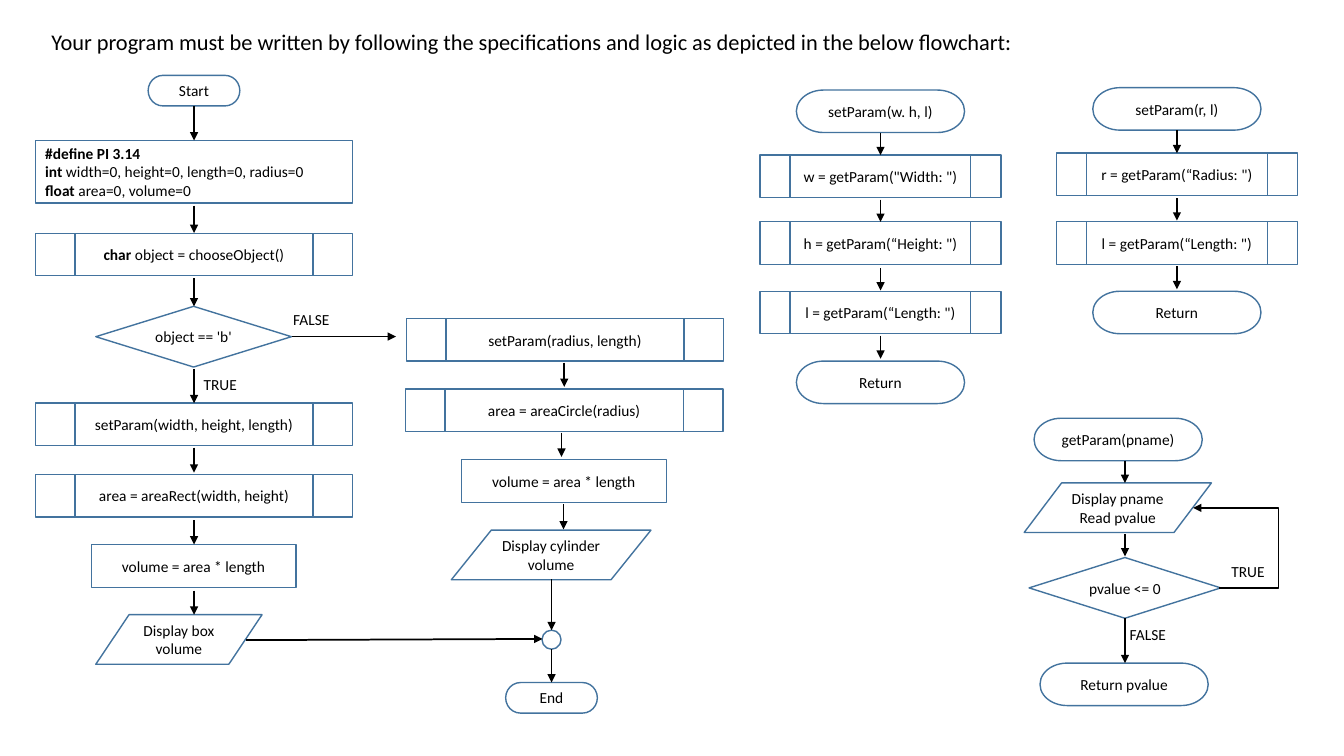
from lxml.etree import SubElement
from pptx import Presentation
from pptx.dml.color import RGBColor
from pptx.enum.shapes import MSO_CONNECTOR, MSO_SHAPE
from pptx.enum.text import MSO_ANCHOR, MSO_AUTO_SIZE, PP_ALIGN
from pptx.oxml.ns import qn
from pptx.util import Cm, Pt

COLORS = {"text": "000000", "arrow": "000000", "outline": "43739E"}
TERMINATOR = MSO_SHAPE.FLOWCHART_TERMINATOR
PROCESS = MSO_SHAPE.FLOWCHART_PROCESS
CALL = MSO_SHAPE.FLOWCHART_PREDEFINED_PROCESS
DECISION = MSO_SHAPE.FLOWCHART_DECISION
DATA = MSO_SHAPE.FLOWCHART_DATA
JUNCTION = MSO_SHAPE.FLOWCHART_CONNECTOR

TITLE = ("Your program must be written by following the specifications "
         "and logic as depicted in the below flowchart:")
DEFINITIONS = ("**#define PI 3.14**\n"
               "**int** width=0, height=0, length=0, radius=0\n"
               "**float** area=0, volume=0")

SMALL_END = (2.31, 0.77)
LARGE_END = (4.24, 1.07)
WIDE_CALL = (8.0, 1.07)
NARROW_CALL = (6.07, 1.07)
VOLUME_STEP = (5.16, 1.09)

NODES = [
    (TERMINATOR, 4.89, 1.9, SMALL_END, "Start"),
    (PROCESS, 4.89, 3.54, (8.0, 1.58), DEFINITIONS, PP_ALIGN.LEFT),
    (CALL, 4.89, 5.88, WIDE_CALL, "**char** object = chooseObject()"),
    (DECISION, 4.88, 7.72, (4.93, 1.53), "object == 'b'"),
    (CALL, 4.89, 10.16, WIDE_CALL, "setParam(width, height, length)"),
    (CALL, 4.89, 11.96, WIDE_CALL, "area = areaRect(width, height)"),
    (PROCESS, 4.88, 13.72, VOLUME_STEP, "volume = area * length"),
    (DATA, 4.51, 15.49, (4.19, 1.25), "Display box volume"),
    (CALL, 14.24, 8.03, WIDE_CALL, "setParam(radius, length)"),
    (CALL, 14.22, 9.8, WIDE_CALL, "area = areaCircle(radius)"),
    (PROCESS, 14.21, 11.58, VOLUME_STEP, "volume = area * length"),
    (DATA, 13.89, 13.36, (5.03, 1.25), "Display cylinder volume"),
    (JUNCTION, 13.9, 15.88, (0.48, 0.48), ""),
    (TERMINATOR, 13.9, 17.2, SMALL_END, "End"),
    (TERMINATOR, 22.19, 2.27, LARGE_END, "setParam(w. h, l)"),
    (CALL, 22.19, 3.91, NARROW_CALL, 'w = getParam("Width: ")'),
    (CALL, 22.19, 5.59, NARROW_CALL, 'h = getParam(“Height: ")'),
    (CALL, 22.19, 7.34, NARROW_CALL, 'l = getParam(“Length: ")'),
    (TERMINATOR, 22.19, 9.1, LARGE_END, "Return"),
    (TERMINATOR, 29.66, 2.21, LARGE_END, "setParam(r, l)"),
    (CALL, 29.66, 3.86, NARROW_CALL, 'r = getParam(“Radius: ")'),
    (CALL, 29.66, 5.59, NARROW_CALL, 'l = getParam(“Length: ")'),
    (TERMINATOR, 29.66, 7.34, LARGE_END, "Return"),
    (TERMINATOR, 28.18, 10.54, LARGE_END, "getParam(pname)"),
    (DATA, 28.17, 12.17, (4.72, 1.25), "Display pname\nRead pvalue"),
    (DECISION, 28.35, 14.05, (4.83, 1.53), "pvalue <= 0"),
    (TERMINATOR, 28.33, 16.71, LARGE_END, "Return pvalue"),
]

DOWN_ARROWS = {
    4.89: [(2.67, 3.54), (5.18, 5.87), (7.01, 7.72), (9.3, 10.16),
           (11.28, 11.91), (13.11, 13.72), (14.88, 15.49)],
    14.22: [(9.14, 9.75)],
    14.15: [(10.9, 11.51)],
    14.2: [(12.7, 13.34)],
    13.9: [(14.6, 15.88), (16.36, 17.2)],
    22.19: [(3.35, 3.91), (5.03, 5.59), (6.76, 7.32), (8.46, 9.04)],
    29.66: [(3.28, 3.86), (5.0, 5.56), (6.71, 7.29)],
    28.35: [(11.61, 12.17), (13.46, 14.02), (15.57, 16.71)],
}

BRANCH_LABELS = [("TRUE", 4.88, 9.32), ("FALSE", 7.14, 7.7),
                 ("TRUE", 30.78, 14.05), ("FALSE", 28.22, 15.62)]


class FlowchartPage:
    """Draws flowchart elements on one slide in a shared style."""

    font = "Calibri"
    text_size = 11
    title_size = 16

    def __init__(self, deck):
        self.page = deck.slides.add_slide(deck.slide_layouts[5])

    def color(self, name):
        """Return a named colour."""
        return RGBColor.from_string(COLORS[name])

    def set_text(self, frame, text, size, align):
        """Set lines of text, switching bold at each double star."""
        frame.word_wrap = True
        for index, line in enumerate(text.split("\n")):
            para = frame.paragraphs[0] if index == 0 else frame.add_paragraph()
            para.alignment = align
            for part, words in enumerate(line.split("**")):
                if words:
                    span = para.add_run()
                    span.text = words
                    span.font.name = self.font
                    span.font.size = Pt(size)
                    span.font.bold = part % 2 == 1
                    span.font.color.rgb = self.color("text")

    def title(self, text):
        """Place the title at the top of the slide."""
        box = self.page.shapes.title
        box.left, box.top, box.width, box.height = Cm(1.04), Cm(0.53), Cm(28.32), Cm(0.97)
        frame = box.text_frame
        frame.vertical_anchor = MSO_ANCHOR.TOP
        frame.auto_size = MSO_AUTO_SIZE.SHAPE_TO_FIT_TEXT
        self.set_text(frame, text, self.title_size, PP_ALIGN.LEFT)
        frame.paragraphs[0].line_spacing = 1.07
        frame.paragraphs[0].space_after = Pt(8)

    def node(self, kind, center, top, size, text, align=PP_ALIGN.CENTER):
        """Add an outlined flowchart shape around a vertical axis."""
        width, height = size
        box = self.page.shapes.add_shape(
            kind, Cm(center - width / 2), Cm(top), Cm(width), Cm(height))
        box.shadow.inherit = False
        box.fill.background()
        box.line.color.rgb = self.color("outline")
        box.line.width = Pt(1)
        box.text_frame.vertical_anchor = MSO_ANCHOR.MIDDLE
        self.set_text(box.text_frame, text, self.text_size, align)

    def label(self, text, left, top):
        """Add a branch label."""
        box = self.page.shapes.add_textbox(Cm(left), Cm(top), Cm(2.06), Cm(0.74))
        box.text_frame.auto_size = MSO_AUTO_SIZE.SHAPE_TO_FIT_TEXT
        self.set_text(box.text_frame, text, self.text_size, PP_ALIGN.LEFT)

    def arrow(self, start, end, turn=None):
        """Add a straight arrow, or an elbow that turns at a given x."""
        kind = MSO_CONNECTOR.STRAIGHT if turn is None else MSO_CONNECTOR.ELBOW
        link = self.page.shapes.add_connector(
            kind, Cm(start[0]), Cm(start[1]), Cm(end[0]), Cm(end[1]))
        link.line.color.rgb = self.color("arrow")
        link.line.width = Pt(1.25)
        properties = link.element.spPr
        SubElement(properties.find(qn("a:ln")), qn("a:tailEnd"), type="triangle")
        SubElement(properties, qn("a:effectLst"))
        if turn is not None:
            share = round((turn - start[0]) / (end[0] - start[0]) * 100000)
            guides = properties.find(qn("a:prstGeom")).get_or_add_avLst()
            SubElement(guides, qn("a:gd"), name="adj1", fmla=f"val {share}")


def main():
    """Build the flowchart slide."""
    deck = Presentation()
    deck.slide_width, deck.slide_height = Cm(33.87), Cm(19.05)
    chart = FlowchartPage(deck)
    chart.title(TITLE)
    for node in NODES:
        chart.node(*node)
    for axis, spans in DOWN_ARROWS.items():
        for top, bottom in spans:
            chart.arrow((axis, top), (axis, bottom))
    chart.arrow((7.37, 8.48), (9.98, 8.48))
    chart.arrow((6.2, 16.13), (13.67, 16.1))
    chart.arrow((30.73, 14.81), (30.07, 12.8), turn=32.22)
    for label in BRANCH_LABELS:
        chart.label(*label)
    deck.save("out.pptx")


if __name__ == "__main__":
    main()
